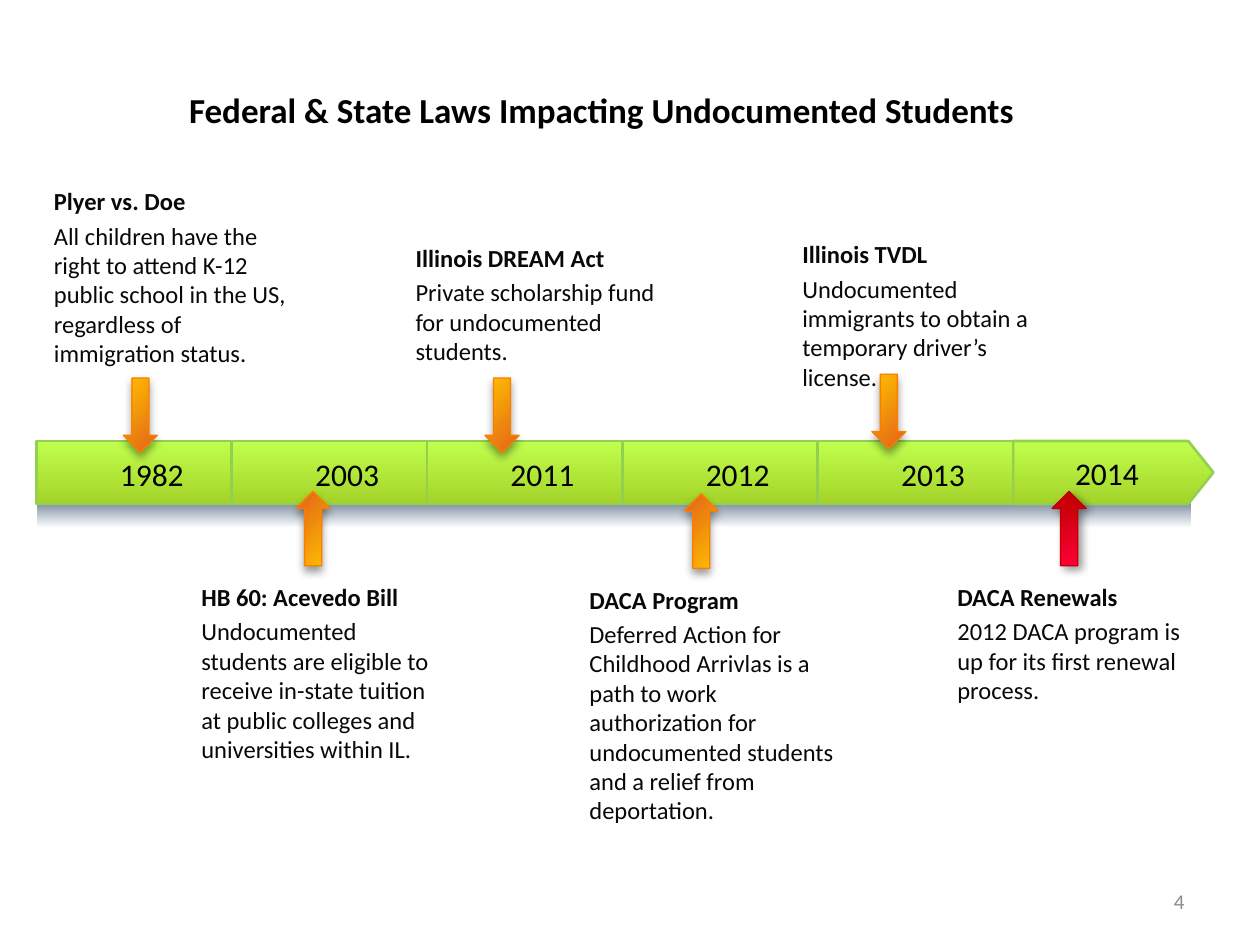
import pptx
import pptx.util
import pptx.dml.color
import pptx.enum.shapes
import pptx.enum.text
import pptx.oxml
import pptx.oxml.ns

ALIGN = pptx.enum.text.PP_ALIGN
ANCHOR = pptx.enum.text.MSO_ANCHOR
SHAPE = pptx.enum.shapes.MSO_SHAPE


def colour(hex_string):
    return pptx.dml.color.RGBColor.from_string(hex_string)


class TimelineSlide:
    """Style and current slide; lengths are cells of a 100 x 75 grid."""

    font = "Calibri"
    columns, rows = 100, 75
    black, ink, grey = "000000", "080808", "8C8C8C"
    green = ("C0FF4D", "A4D329", "92D050")
    orange = ("FFC000", "E36119", "FC7E00")
    red = ("FB0036", "C00000", "C00000")

    def __init__(self, presentation):
        self.column = presentation.slide_width / self.columns
        self.row = presentation.slide_height / self.rows
        self.slide = presentation.slides.add_slide(presentation.slide_layouts[5])

    def box(self, left, top, width, height):
        return (round(left * self.column), round(top * self.row),
                round(width * self.column), round(height * self.row))

    def run(self, paragraph, text, size, ink, bold=False):
        run = paragraph.add_run()
        run.text = text
        run.font.name = self.font
        run.font.size = pptx.util.Pt(size)
        run.font.bold = bold
        run.font.color.rgb = colour(ink)

    def title(self, text, *place):
        shape = self.slide.shapes.title
        shape.left, shape.top, shape.width, shape.height = self.box(*place)
        frame = shape.text_frame
        frame.vertical_anchor = ANCHOR.TOP
        frame.auto_size = pptx.enum.text.MSO_AUTO_SIZE.NONE
        frame.paragraphs[0].alignment = ALIGN.LEFT
        self.run(frame.paragraphs[0], text, 20, self.black, True)

    def frame(self, *place):
        frame = self.slide.shapes.add_textbox(*self.box(*place)).text_frame
        frame.word_wrap = True
        return frame

    def label(self, text, size, ink, alignment, *place):
        frame = self.frame(*place)
        frame.vertical_anchor = ANCHOR.MIDDLE
        frame.paragraphs[0].alignment = alignment
        self.run(frame.paragraphs[0], text, size, ink)

    def note(self, heading, body, *place):
        frame = self.frame(*place)
        for paragraph, text, bold in ((frame.paragraphs[0], heading, True),
                                      (frame.add_paragraph(), body, False)):
            paragraph.space_before = pptx.util.Pt(2.8)
            self.run(paragraph, text, 14, self.ink, bold)

    def gradient_shape(self, kind, place, colours, angle=90, line_width=None):
        shape = self.slide.shapes.add_shape(kind, *self.box(*place))
        shape.shadow.inherit = False
        shape.fill.gradient()
        shape.fill.gradient_angle = 360 - angle
        for stop, stop_colour in zip(shape.fill.gradient_stops, colours):
            stop.color.rgb = colour(stop_colour)
        if line_width:
            shape.line.color.rgb = colour(colours[2])
            shape.line.width = pptx.util.Pt(line_width)
        else:
            shape.line.fill.background()
        return shape

    def fading_band(self, *place):
        shape = self.gradient_shape(SHAPE.RECTANGLE, place, ("070D13", "1F497D"))
        last_colour = shape.element.spPr.findall(".//" + pptx.oxml.ns.qn("a:srgbClr"))[-1]
        last_colour.append(pptx.oxml.parse_xml(
            f'<a:alpha {pptx.oxml.ns.nsdecls("a")} val="0"/>'))

    def arrow(self, left, top, upward, colours, angle, shadow_angle):
        shape = self.gradient_shape(SHAPE.DOWN_ARROW, (left, top, 2.7, 5.9),
                                    colours, angle, 0.75)
        shape.rotation = 180 if upward else 0
        effects = shape.element.spPr.find(pptx.oxml.ns.qn("a:effectLst"))
        effects.append(pptx.oxml.parse_xml(
            f'<a:outerShdw {pptx.oxml.ns.nsdecls("a")} blurRad="{pptx.util.Pt(5)}" '
            f'dist="{pptx.util.Pt(3)}" dir="{shadow_angle * 60000}" rotWithShape="0">'
            '<a:srgbClr val="000000"><a:alpha val="40000"/></a:srgbClr></a:outerShdw>'))


# Arrow left, arrow top, note top, note height, heading, body
EVENTS_ABOVE = [
    (9.8, 30, 14.3, 15.6, "Plyer vs. Doe",
     "All children have the right to attend K-12 public school in the US, "
     "regardless of immigration status."),
    (38.5, 30, 18.8, 10.9, "Illinois DREAM Act",
     "Private scholarship fund for undocumented students."),
    (69.2, 29.7, 18.5, 13.3, "Illinois TVDL",
     "Undocumented immigrants to obtain a temporary driver’s license."),
]
EVENTS_BELOW = [
    (23.5, 39, 45.7, 15.6, "HB 60: Acevedo Bill",
     "Undocumented students are eligible to receive in-state tuition at public "
     "colleges and universities within IL."),
    (54.3, 39.2, 45.9, 20.3, "DACA Program",
     "Deferred Action for Childhood Arrivlas is a path to work authorization for "
     "undocumented students and a relief from deportation."),
    (83.5, 39, 45.7, 10.9, "DACA Renewals",
     "2012 DACA program is up for its first renewal process."),
]
YEARS = ["1982", "2003", "2011", "2012", "2013"]
LAST_YEAR = "2014"


def main():
    presentation = pptx.Presentation()
    presentation.slide_width = pptx.util.Inches(10)
    presentation.slide_height = pptx.util.Inches(7.5)
    page = TimelineSlide(presentation)

    # Title and page number
    page.title("Federal & State Laws Impacting Undocumented Students", 14, 6.5, 72.2, 4.4)
    page.label("4", 12, page.grey, ALIGN.RIGHT, 71.7, 69.5, 23.3, 4)

    # Timeline bar: equal year segments ending in a pointed one
    start, step, top, height = 2.9, 15.5, 35, 5
    page.fading_band(3, 38.3, 91.5, 3.5)
    end = page.gradient_shape(SHAPE.PENTAGON, (start + len(YEARS) * step, top, 15.9, height),
                              page.green, line_width=1.5)
    end.adjustments[0] = 0.4
    end.text_frame.vertical_anchor = ANCHOR.MIDDLE
    end.text_frame.paragraphs[0].alignment = ALIGN.CENTER
    page.run(end.text_frame.paragraphs[0], LAST_YEAR, 18, page.black)
    for index, year in enumerate(YEARS):
        left = start + index * step
        page.gradient_shape(SHAPE.RECTANGLE, (left, top, step, height),
                            page.green, line_width=1.5)
        page.label(year, 18, page.black, ALIGN.CENTER, left + 1.4, top + 1, step, 3.3)

    # Events: a note and an arrow pointing at the bar
    for events, upward, offset in ((EVENTS_ABOVE, False, 6.5), (EVENTS_BELOW, True, 8.5)):
        for left, arrow_top, note_top, note_height, heading, body in events:
            page.note(heading, body, left - offset, note_top, 21.4, note_height)
            is_renewal = heading == "DACA Renewals"
            style = (page.red, 90, 45) if is_renewal else (page.orange, 45, 90)
            page.arrow(left, arrow_top, upward, *style)

    presentation.save("out.pptx")


if __name__ == "__main__":
    main()
